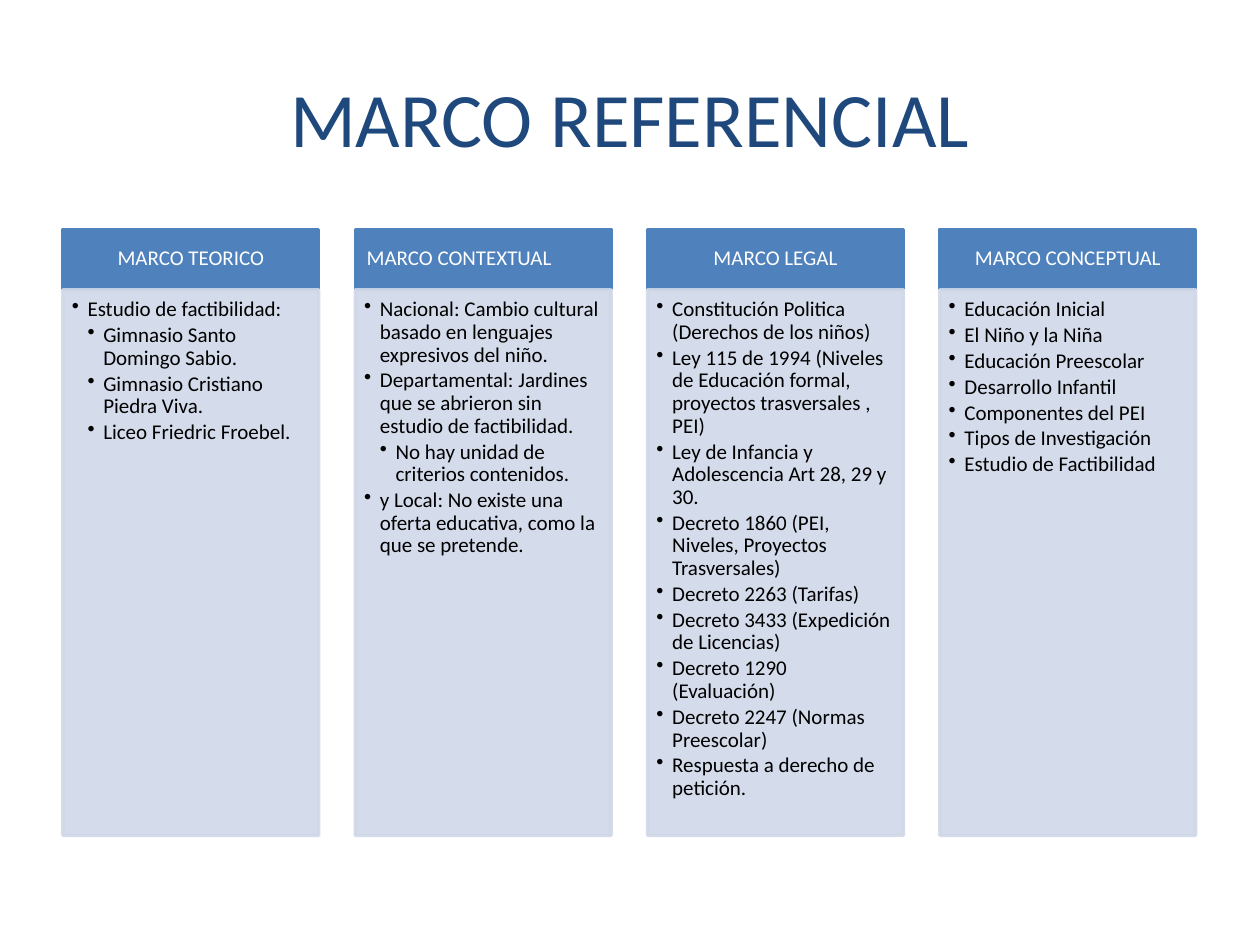
"""Build the MARCO REFERENCIAL slide: four headed columns of bullets."""
from lxml import etree
from pptx import Presentation
from pptx.dml.color import RGBColor
from pptx.enum import shapes, text
from pptx.oxml import ns
from pptx.util import Inches, Pt

TITLE = "MARCO REFERENCIAL"
LEFT, CENTER = text.PP_ALIGN.LEFT, text.PP_ALIGN.CENTER
COLUMNS = [
    ("MARCO TEORICO", CENTER, [
        (0, "Estudio de factibilidad:"),
        (1, "Gimnasio Santo Domingo Sabio."),
        (1, "Gimnasio Cristiano Piedra Viva."),
        (1, "Liceo Friedric Froebel."),
    ]),
    ("MARCO CONTEXTUAL", LEFT, [
        (0, "Nacional: Cambio cultural basado en lenguajes expresivos del niño."),
        (0, "Departamental: Jardines que se abrieron sin estudio de factibilidad."),
        (1, "No hay unidad de criterios contenidos."),
        (0, "y Local: No existe una oferta educativa, como la que se pretende."),
    ]),
    ("MARCO LEGAL", CENTER, [
        (0, "Constitución Politica (Derechos de los niños)"),
        (0, "Ley 115 de 1994 (Niveles de Educación formal, proyectos trasversales , PEI)"),
        (0, "Ley de Infancia y Adolescencia Art 28, 29 y 30."),
        (0, "Decreto 1860 (PEI, Niveles, Proyectos Trasversales)"),
        (0, "Decreto 2263 (Tarifas)"),
        (0, "Decreto 3433 (Expedición de Licencias)"),
        (0, "Decreto 1290 (Evaluación)"),
        (0, "Decreto 2247 (Normas Preescolar)"),
        (0, "Respuesta a derecho de petición."),
    ]),
    ("MARCO CONCEPTUAL", CENTER, [
        (0, "Educación Inicial"),
        (0, "El Niño y la Niña"),
        (0, "Educación Preescolar"),
        (0, "Desarrollo Infantil"),
        (0, "Componentes del PEI"),
        (0, "Tipos de Investigación"),
        (0, "Estudio de Factibilidad"),
    ]),
]
THEME = {
    "font": "Calibri", "title_size": 44, "text_size": 12,
    "title": "1F497D", "header": "4F81BD", "header_text": "FFFFFF",
    "body": "D0D8E8", "body_text": "000000", "body_alpha": 90,
}
COLUMN_LEFT, COLUMN_WIDTH, COLUMN_STEP = 0.5, 2.03, 2.32
HEADER_TOP, HEADER_HEIGHT = 1.82, 0.47
BODY_TOP, BODY_HEIGHT = 2.3, 4.33
BULLET_INDENT = 0.125
HEADER_INSETS = (0.09, 0.05, 0.09, 0.05)
BODY_INSETS = (0.07, 0.07, 0.09, 0.1)
MIDDLE, TOP = text.MSO_ANCHOR.MIDDLE, text.MSO_ANCHOR.TOP


def apply_format(target, values):
    for name, value in values.items():
        setattr(target, name, value)


def set_frame(box, insets, anchor):
    sides = ("margin_left", "margin_top", "margin_right", "margin_bottom")
    margins = dict(zip(sides, map(Inches, insets)))
    apply_format(box.text_frame, {"word_wrap": True, "vertical_anchor": anchor, **margins})


def write(para, words, size, color, **layout):
    apply_format(para, layout)
    span = para.add_run()
    span.text = words
    apply_format(span.font, {"name": THEME["font"], "size": Pt(size)})
    span.font.color.rgb = RGBColor.from_string(color)


def add_bullet(para, level):
    properties = para._p.get_or_add_pPr()
    properties.set("marL", str(Inches(BULLET_INDENT * (level + 1))))
    properties.set("indent", str(-Inches(BULLET_INDENT)))
    etree.SubElement(properties, ns.qn("a:buChar")).set("char", "•")


def add_panel(page, place, color, alpha=100):
    panel = page.shapes.add_shape(shapes.MSO_SHAPE.RECTANGLE, *map(Inches, place))
    panel.shadow.inherit = False
    panel.line.width = Pt(2)
    for fill in (panel.fill, panel.line.fill):
        fill.solid()
        fill.fore_color.rgb = RGBColor.from_string(color)
    if alpha < 100:
        for tone in panel._element.spPr.iter(ns.qn("a:srgbClr")):
            etree.SubElement(tone, ns.qn("a:alpha")).set("val", str(alpha * 1000))
    return panel


def add_column(page, left, heading, align, items):
    header = add_panel(page, (left, HEADER_TOP, COLUMN_WIDTH, HEADER_HEIGHT), THEME["header"])
    set_frame(header, HEADER_INSETS, MIDDLE)
    write(header.text_frame.paragraphs[0], heading, THEME["text_size"],
          THEME["header_text"], alignment=align, line_spacing=0.9)

    body = add_panel(page, (left, BODY_TOP, COLUMN_WIDTH, BODY_HEIGHT),
                     THEME["body"], THEME["body_alpha"])
    set_frame(body, BODY_INSETS, TOP)
    frame = body.text_frame
    for index, (level, words) in enumerate(items):
        para = frame.add_paragraph() if index else frame.paragraphs[0]
        add_bullet(para, level)
        write(para, words, THEME["text_size"], THEME["body_text"], level=level,
              alignment=LEFT, line_spacing=0.9, space_after=Pt(1.8))


def main():
    deck = Presentation()
    apply_format(deck, {"slide_width": Inches(10), "slide_height": Inches(7.5)})
    page = deck.slides.add_slide(deck.slide_layouts[6])
    title = page.shapes.add_textbox(*map(Inches, (0.5, 0.3, 9, 1.25)))
    set_frame(title, (0.1, 0.05, 0.1, 0.05), MIDDLE)
    write(title.text_frame.paragraphs[0], TITLE, THEME["title_size"],
          THEME["title"], alignment=CENTER)
    for index, column in enumerate(COLUMNS):
        add_column(page, COLUMN_LEFT + index * COLUMN_STEP, *column)
    deck.save("out.pptx")


if __name__ == "__main__":
    main()
